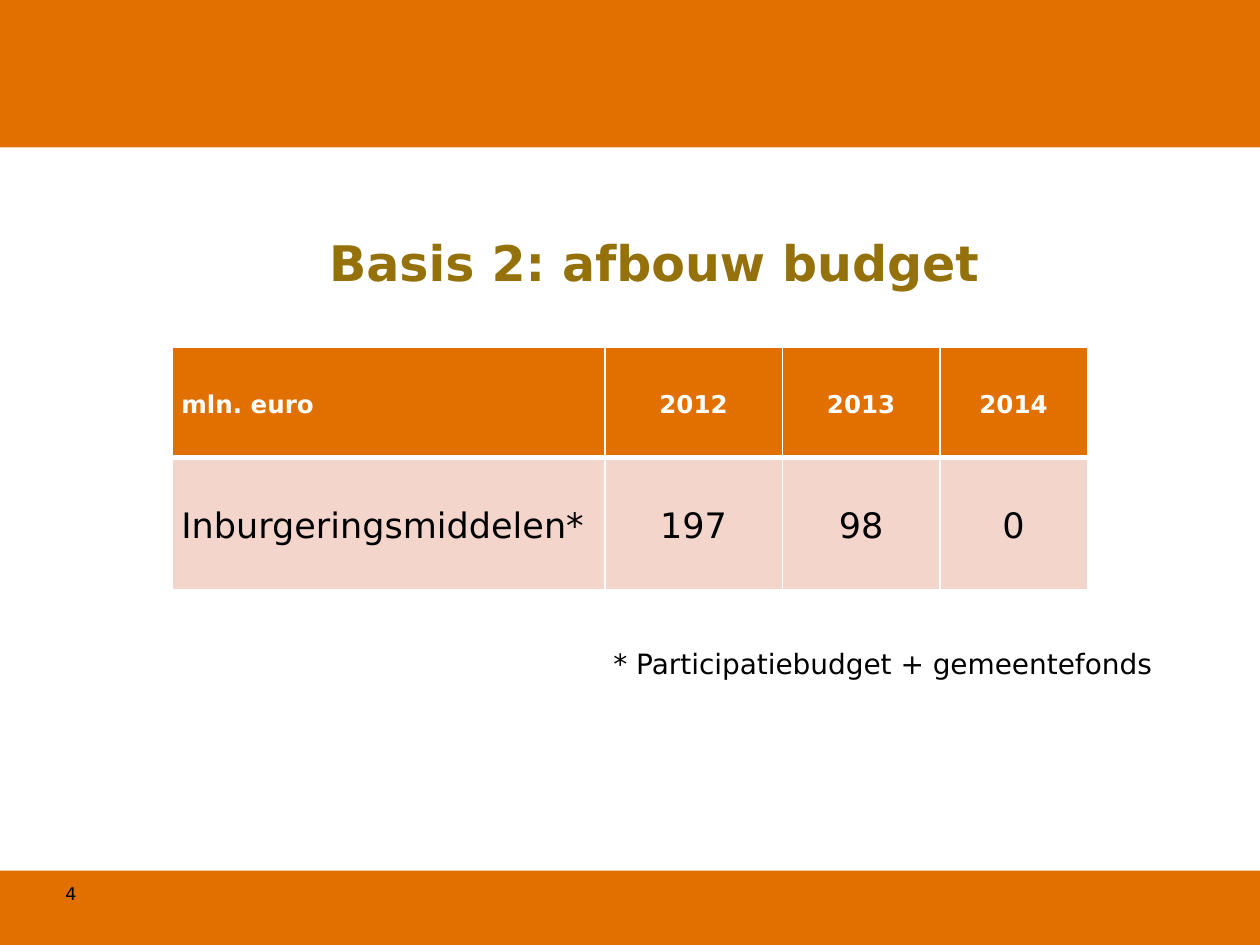
import pptx
import pptx.util
import pptx.dml.color
import pptx.enum.shapes
import pptx.enum.text
import lxml.etree

Inch = pptx.util.Inches
Align = pptx.enum.text.PP_ALIGN
Anchor = pptx.enum.text.MSO_ANCHOR

WIDE, HIGH = 10, 7.5
FONT = "DejaVu Sans"
ORANGE, PINK, GOLD = "E17000", "F4D5CC", "94710A"
BLACK, WHITE = "000000", "FFFFFF"

TITLE = "Basis 2: afbouw budget"
NOTE = "* Participatiebudget + gemeentefonds"
PAGE = "4"
BANDS = [(0, 1.17), (6.91, 0.59)]
DATA = [
    ["mln. euro", "2012", "2013", "2014"],
    ["Inburgeringsmiddelen*", "197", "98", "0"],
]
COLS = [3.43, 1.41, 1.25, 1.17]
ROWS = [0.87, 1.05]
LOOKS = [
    dict(fill=ORANGE, size=14, hue=WHITE, bold=True, base=3),
    dict(fill=PINK, size=20, hue=BLACK, bold=False, base=1),
]


def color(code):
    return pptx.dml.color.RGBColor.from_string(code)


def write(frame, text, size=16, hue=BLACK, bold=False, align=Align.LEFT,
          anchor=Anchor.TOP, space=None):
    frame.word_wrap = True
    frame.vertical_anchor = anchor
    para = frame.paragraphs[0]
    para.alignment = align
    para.line_spacing = space
    run = para.add_run()
    run.text = text
    font = run.font
    font.name, font.size, font.bold = FONT, pptx.util.Pt(size), bold
    font.color.rgb = color(hue)


def edge(cell, base):
    props = cell._tc.get_or_add_tcPr()
    space = pptx.oxml.ns.nsuri("a")
    for spot, (side, width) in enumerate(
            [("lnL", 1), ("lnR", 1), ("lnT", 1), ("lnB", base)]):
        line = lxml.etree.Element(f"{{{space}}}{side}", w=str(pptx.util.Pt(width)))
        fill = lxml.etree.SubElement(line, f"{{{space}}}solidFill")
        lxml.etree.SubElement(fill, f"{{{space}}}srgbClr", val=WHITE)
        props.insert(spot, line)


def band(slide, top, high):
    shape = slide.shapes.add_shape(
        pptx.enum.shapes.MSO_SHAPE.RECTANGLE, 0, Inch(top), Inch(WIDE), Inch(high))
    shape.shadow.inherit = False
    shape.fill.solid()
    shape.fill.fore_color.rgb = color(ORANGE)
    shape.line.fill.background()


def label(slide, box, text, **form):
    shape = slide.shapes.add_textbox(*map(Inch, box))
    write(shape.text_frame, text, **form)


def grid(slide, left, top):
    table = slide.shapes.add_table(
        len(ROWS), len(COLS), Inch(left), Inch(top),
        Inch(sum(COLS)), Inch(sum(ROWS))).table
    for col, wide in zip(table.columns, COLS):
        col.width = Inch(wide)
    for row, high, words, look in zip(table.rows, ROWS, DATA, LOOKS):
        row.height = Inch(high)
        for spot, (cell, text) in enumerate(zip(row.cells, words)):
            cell.fill.solid()
            cell.fill.fore_color.rgb = color(look["fill"])
            cell.margin_left = cell.margin_right = Inch(0.07)
            cell.margin_top = cell.margin_bottom = 0
            cell.vertical_anchor = Anchor.MIDDLE
            write(cell.text_frame, text, size=look["size"], hue=look["hue"],
                  bold=look["bold"], space=1.14, anchor=None,
                  align=Align.CENTER if spot else Align.LEFT)
            edge(cell, look["base"])


def main():
    deck = pptx.Presentation()
    deck.slide_width, deck.slide_height = Inch(WIDE), Inch(HIGH)
    slide = deck.slides.add_slide(deck.slide_layouts[5])
    for top, high in BANDS:
        band(slide, top, high)
    title = slide.shapes.title
    title.left, title.top, title.width, title.height = map(
        Inch, (1.72, 1.77, 6.94, 0.62))
    write(title.text_frame, TITLE, size=28, hue=GOLD, bold=True,
          align=Align.CENTER, anchor=Anchor.MIDDLE)
    grid(slide, 1.37, 2.76)
    label(slide, (4.77, 5.08, 4.69, 0.37), NOTE)
    label(slide, (0.42, 6.96, 0.78, 0.4), PAGE, size=10)
    deck.save("out.pptx")


if __name__ == "__main__":
    main()
